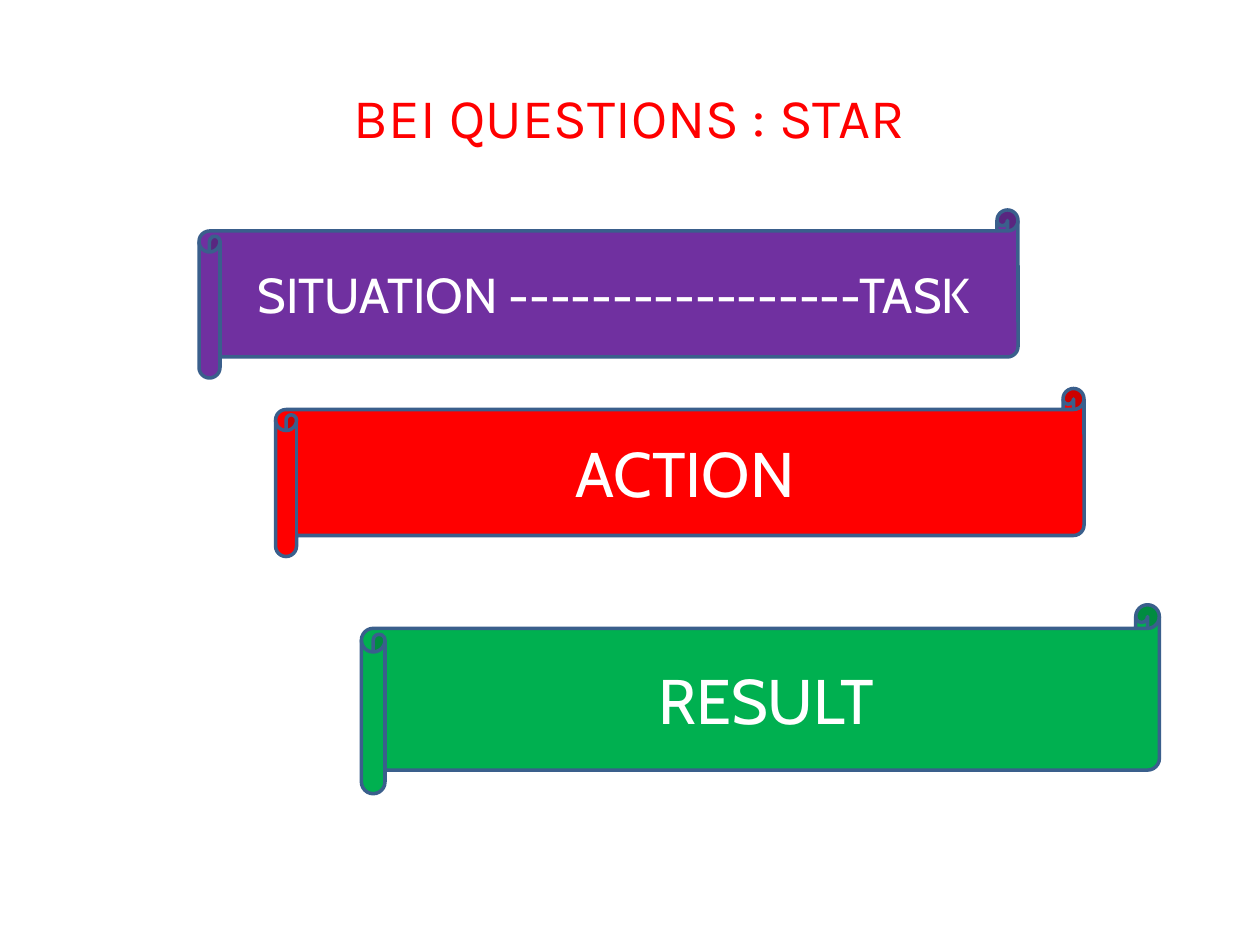
from pptx import Presentation
from pptx.dml.color import RGBColor
from pptx.enum.shapes import MSO_SHAPE
from pptx.enum.text import MSO_ANCHOR, PP_ALIGN
from pptx.util import Pt

SCROLL = MSO_SHAPE.HORIZONTAL_SCROLL
MIDDLE = MSO_ANCHOR.MIDDLE
CENTER = PP_ALIGN.CENTER

COLORS = {
    "red": "FF0000",
    "purple": "7030A0",
    "green": "00B050",
    "outline": "3A5F8C",
    "white": "FFFFFF",
}


def rgb(name):
    """Return the named colour."""
    return RGBColor.from_string(COLORS[name])


def set_text(sp, text, font, size, color):
    """Write one centred line in the middle of a shape."""
    tf = sp.text_frame
    tf.word_wrap = True
    tf.vertical_anchor = MIDDLE
    p = tf.paragraphs[0]
    p.text = text
    p.alignment = CENTER
    p.font.name = font
    p.font.size = Pt(size)
    p.font.color.rgb = rgb(color)


def add_title(slide, box, text):
    """Place the slide title in the given box."""
    sp = slide.shapes.add_textbox(*map(Pt, box))
    set_text(sp, text, "Karla", 32, "red")


def add_scroll(slide, box, text, size, fill):
    """Place one labelled scroll banner in the given box."""
    sp = slide.shapes.add_shape(SCROLL, *map(Pt, box))
    sp.shadow.inherit = False
    sp.fill.solid()
    sp.fill.fore_color.rgb = rgb(fill)
    sp.line.color.rgb = rgb("outline")
    sp.line.width = Pt(2)
    set_text(sp, text, "Cabin", size, "white")


def main():
    """Build and save the slide."""
    prs = Presentation()
    prs.slide_width, prs.slide_height = Pt(720), Pt(540)
    slide = prs.slides.add_slide(prs.slide_layouts[6])
    add_title(slide, (36, 21.6, 648, 90), "BEI QUESTIONS : STAR")
    scrolls = [
        ((113.76, 120, 468, 96), "SITUATION -----------------TASK", 28, "purple"),
        ((157.5, 222, 462, 96), "ACTION", 36, "red"),
        ((206.5, 345.6, 456, 108), "RESULT", 36, "green"),
    ]
    for box, text, size, fill in scrolls:
        add_scroll(slide, box, text, size, fill)
    prs.save("out.pptx")


if __name__ == "__main__":
    main()
